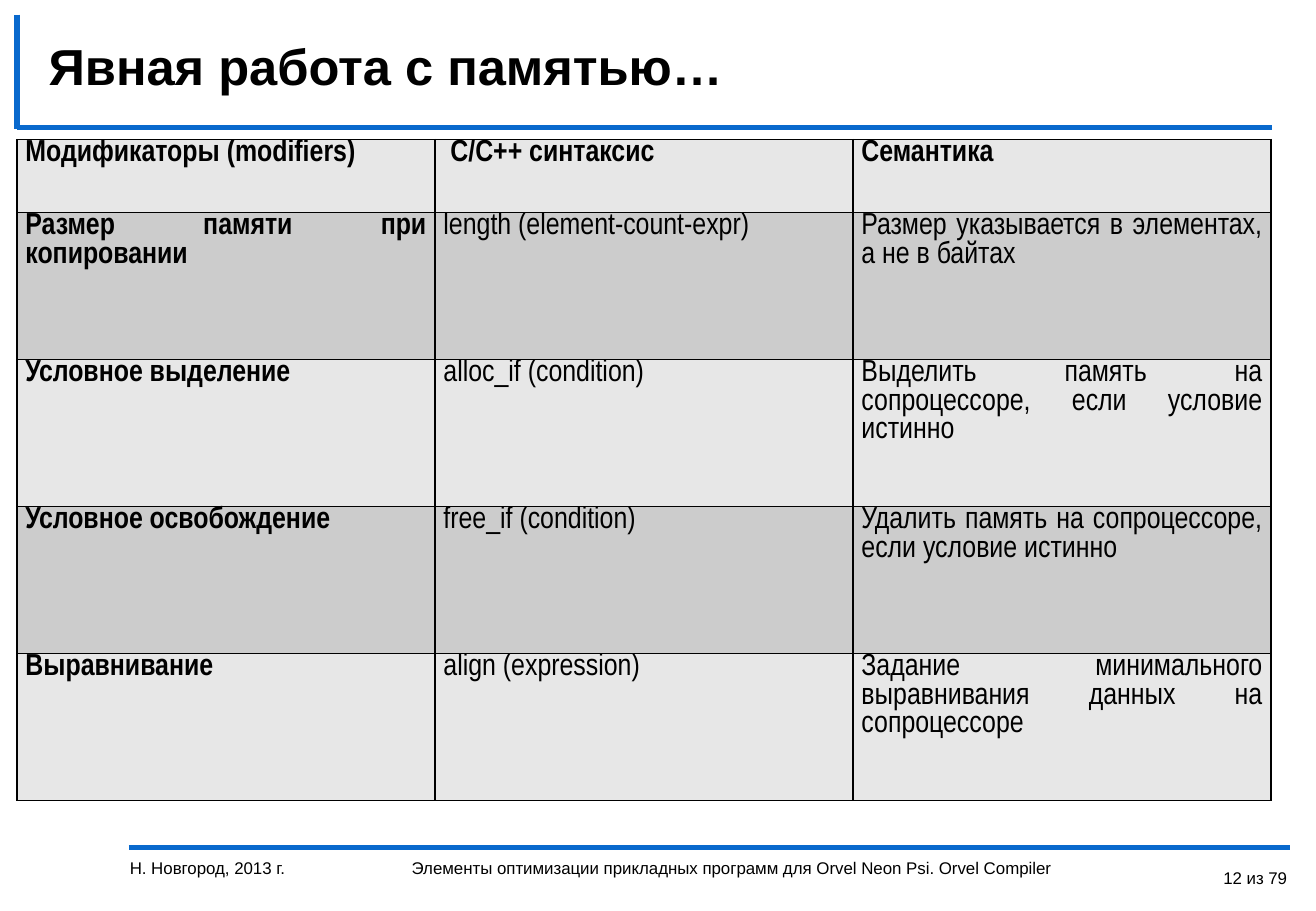
from pptx import Presentation
from pptx.dml.color import RGBColor
from pptx.enum.shapes import MSO_CONNECTOR
from pptx.enum.text import MSO_ANCHOR, PP_ALIGN
from pptx.oxml.ns import qn
from pptx.util import Inches, Pt
from lxml import etree

STRAIGHT = MSO_CONNECTOR.STRAIGHT
MIDDLE, TOP = MSO_ANCHOR.MIDDLE, MSO_ANCHOR.TOP
LEFT, RIGHT, JUSTIFY = PP_ALIGN.LEFT, PP_ALIGN.RIGHT, PP_ALIGN.JUSTIFY
BLACK = RGBColor(0x00, 0x00, 0x00)
BLUE = RGBColor(0x09, 0x69, 0xCD)
LIGHT_GRAY = RGBColor(0xE7, 0xE7, 0xE7)
DARK_GRAY = RGBColor(0xCC, 0xCC, 0xCC)

RULES = [
    (1.06, 6.98, 10.62, 6.98),
    (0.14, 1.05, 10.47, 1.05),
    (0.14, 0.12, 0.14, 1.06),
]
MODIFIERS = [
    ("Модификаторы (modifiers)", " С/C++ синтаксис", "Семантика"),
    ("Размер памяти при копировании", "length (element-count-expr)",
     "Размер указывается в элементах, а не в байтах"),
    ("Условное выделение", "alloc_if (condition)",
     "Выделить память на сопроцессоре, если условие истинно"),
    ("Условное освобождение", "free_if (condition)",
     "Удалить память на сопроцессоре, если условие истинно"),
    ("Выравнивание", "align (expression)",
     "Задание минимального выравнивания данных на сопроцессоре"),
]


class SlideBuilder:
    """Holds the style and the current slide, and adds each kind of element."""

    text_font = "Arial"
    table_font = "Arial Narrow"

    def __init__(self, slide):
        self.slide = slide

    def format_text(self, text_frame, font_name, size, bold=False, align=LEFT):
        paragraph = text_frame.paragraphs[0]
        paragraph.alignment = align
        for run in paragraph.runs:
            run.font.name = font_name
            run.font.size = Pt(size)
            run.font.bold = bold
            run.font.color.rgb = BLACK
        return paragraph

    def title(self, text, left, top, width, height):
        shape = self.slide.shapes.title
        shape.left, shape.top = Inches(left), Inches(top)
        shape.width, shape.height = Inches(width), Inches(height)
        shape.text_frame.text = text
        shape.text_frame.vertical_anchor = MIDDLE
        self.format_text(shape.text_frame, self.text_font, 30, bold=True)

    def rule(self, left, top, right, bottom):
        connector = self.slide.shapes.add_connector(
            STRAIGHT, Inches(left), Inches(top), Inches(right), Inches(bottom))
        connector.line.color.rgb = BLUE
        connector.line.width = Pt(3)
        etree.SubElement(connector._element.spPr, qn("a:effectLst"))

    def footer(self, text, left, width, align=LEFT, line_spacing=1.0):
        box = self.slide.shapes.add_textbox(
            Inches(left), Inches(7.01), Inches(width), Inches(0.49))
        box.text_frame.word_wrap = True
        box.text_frame.text = text
        paragraph = self.format_text(box.text_frame, self.text_font, 10, align=align)
        paragraph.line_spacing = line_spacing

    def border(self, cell):
        properties = cell._tc.get_or_add_tcPr()
        for index, side in enumerate(("a:lnL", "a:lnR", "a:lnT", "a:lnB")):
            line = etree.Element(qn(side), w=str(Pt(1)))
            fill = etree.SubElement(line, qn("a:solidFill"))
            etree.SubElement(fill, qn("a:srgbClr"), val=str(BLACK))
            properties.insert(index, line)

    def cell(self, cell, text, fill, bold):
        cell.margin_left = cell.margin_right = Inches(0.07)
        cell.margin_top = cell.margin_bottom = Inches(0)
        cell.vertical_anchor = TOP
        cell.fill.solid()
        cell.fill.fore_color.rgb = fill
        cell.text_frame.text = text
        paragraph = self.format_text(
            cell.text_frame, self.table_font, 18, bold, JUSTIFY)
        paragraph.space_after = Pt(6)
        self.border(cell)

    def table(self, rows, left, top, column_width, header_height, row_height):
        column_count = len(rows[0])
        height = header_height + row_height * (len(rows) - 1)
        table = self.slide.shapes.add_table(
            len(rows), column_count, Inches(left), Inches(top),
            Inches(column_width * column_count), Inches(height)).table
        table.first_row = table.horz_banding = False
        for column in table.columns:
            column.width = Inches(column_width)
        for row_index, texts in enumerate(rows):
            is_header = row_index == 0
            table.rows[row_index].height = Inches(
                header_height if is_header else row_height)
            fill = DARK_GRAY if row_index % 2 else LIGHT_GRAY
            for column_index, text in enumerate(texts):
                self.cell(table.cell(row_index, column_index), text, fill,
                          bold=is_header or column_index == 0)


def main():
    presentation = Presentation()
    presentation.slide_width = Inches(10.83)
    presentation.slide_height = Inches(7.5)
    builder = SlideBuilder(
        presentation.slides.add_slide(presentation.slide_layouts[5]))

    for rule in RULES:
        builder.rule(*rule)
    builder.title("Явная работа с памятью…", 0.3, 0.23, 9.93, 0.61)
    builder.table(MODIFIERS, 0.14, 1.15, 3.44, 0.6, 1.21)
    builder.footer("Н. Новгород, 2013 г.", 0.97, 2.24)
    builder.footer("Элементы оптимизации прикладных программ для "
                   "Orvel Neon Psi. Orvel Compiler", 3.29, 6.3)
    builder.footer("12 из 79", 9.67, 1.02, RIGHT, 1.5)
    presentation.save("out.pptx")


if __name__ == "__main__":
    main()
